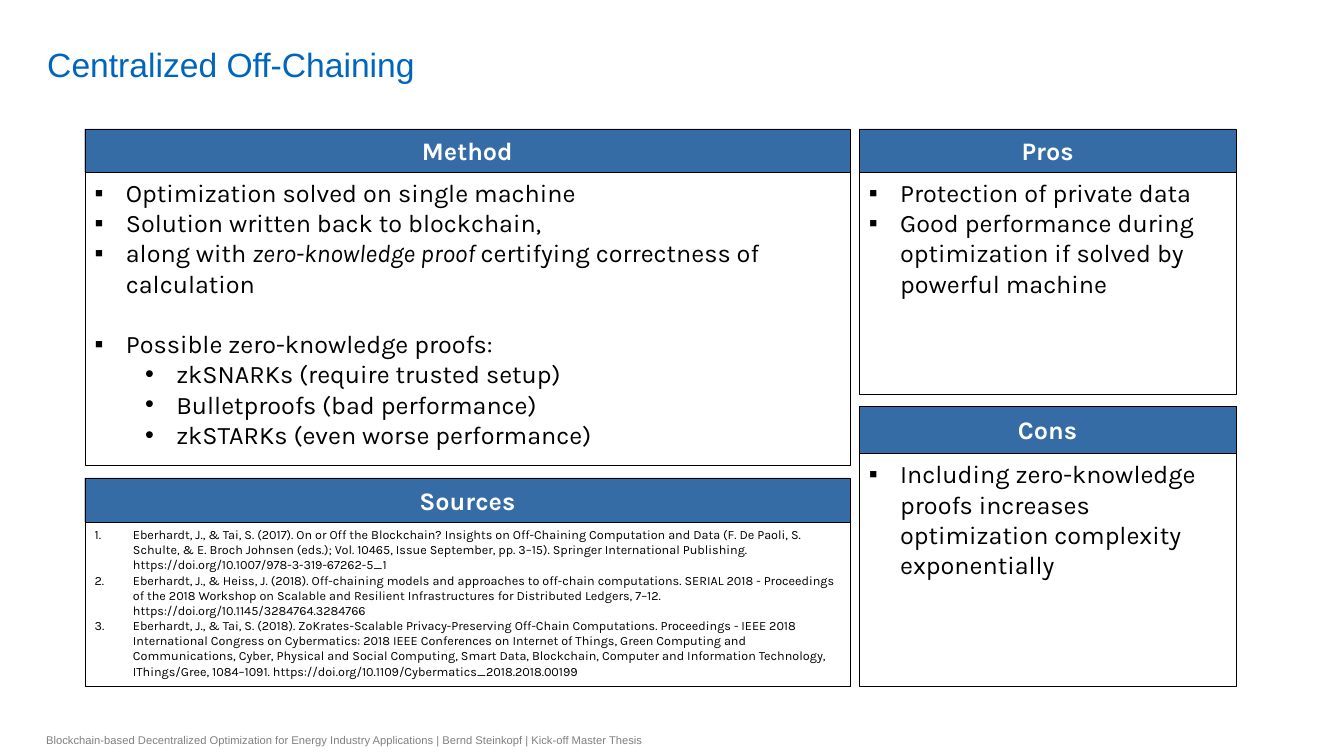
from lxml.etree import SubElement
from pptx import Presentation
from pptx.dml.color import RGBColor
from pptx.enum.shapes import MSO_SHAPE
from pptx.enum.text import MSO_ANCHOR, PP_ALIGN
from pptx.oxml.ns import qn
from pptx.util import Inches, Pt

COLORS = {"title": "0065BD", "header": "356CA5", "white": "FFFFFF",
          "black": "000000", "footer": "808080"}

TITLE = "Centralized Off-Chaining"
FOOTER = ("Blockchain-based Decentralized Optimization for Energy Industry Applications"
          " | Bernd Steinkopf | Kick-off Master Thesis")

# Each paragraph: (style, text); text between asterisks is italic
METHOD = [
    ("square", "Optimization solved on single machine"),
    ("square", "Solution written back to blockchain,"),
    ("square", "along with *zero-knowledge proof *certifying correctness of calculation"),
    ("square after gap", "Possible zero-knowledge proofs:"),
    ("dot", "zkSNARKs (require trusted setup)"),
    ("dot", "Bulletproofs (bad performance)"),
    ("dot", "zkSTARKs (even worse performance)"),
]
SOURCES = [
    ("number", "Eberhardt, J., & Tai, S. (2017). On or Off the Blockchain? Insights on "
     "Off-Chaining Computation and Data (F. De Paoli, S. Schulte, & E. Broch Johnsen (eds.); "
     "Vol. 10465, Issue September, pp. 3–15). Springer International Publishing. "
     "https://doi.org/10.1007/978-3-319-67262-5_1"),
    ("number", "Eberhardt, J., & Heiss, J. (2018). Off-chaining models and approaches to "
     "off-chain computations. SERIAL 2018 - Proceedings of the 2018 Workshop on Scalable and "
     "Resilient Infrastructures for Distributed Ledgers, 7–12. "
     "https://doi.org/10.1145/3284764.3284766"),
    ("number", "Eberhardt, J., & Tai, S. (2018). ZoKrates-Scalable Privacy-Preserving "
     "Off-Chain Computations. Proceedings - IEEE 2018 International Congress on Cybermatics: "
     "2018 IEEE Conferences on Internet of Things, Green Computing and Communications, Cyber, "
     "Physical and Social Computing, Smart Data, Blockchain, Computer and Information "
     "Technology, IThings/Gree, 1084–1091. https://doi.org/10.1109/Cybermatics_2018.2018.00199"),
]
PROS = [
    ("square", "Protection of private data"),
    ("square", "Good performance during optimization if solved by powerful machine"),
]
CONS = [("square", "Including zero-knowledge proofs increases optimization complexity "
                   "exponentially")]

# Bullet character (None for numbers), left margin, hanging indent, size, space before
STYLES = {
    "square": ("▪", 0.31, 0.31, 18, 0),
    "square after gap": ("▪", 0.31, 0.31, 18, 21.6),
    "dot": ("•", 0.81, 0.31, 18, 0),
    "number": (None, 0.38, 0.38, 9, 0),
}

LEFT_COLUMN, RIGHT_COLUMN = (0.84, 7.59), (8.52, 3.74)
# Heading, paragraphs, column, top, header height, bottom
PANELS = [
    ("Pros", PROS, RIGHT_COLUMN, 1.28, 0.43, 3.91),
    ("Cons", CONS, RIGHT_COLUMN, 4.03, 0.47, 6.81),
    ("Sources", SOURCES, LEFT_COLUMN, 4.74, 0.44, 6.81),
    ("Method", METHOD, LEFT_COLUMN, 1.28, 0.43, 4.62),
]


def rgb(name):
    return RGBColor.from_string(COLORS[name])


def set_font(paragraph, name, size, color, bold=False):
    font = paragraph.font
    font.name, font.size, font.bold = name, Pt(size), bold
    font.color.rgb = rgb(color)


def set_bullet(paragraph, character, margin, hanging):
    properties = paragraph._p.get_or_add_pPr()
    properties.set("marL", str(Inches(margin)))
    properties.set("indent", str(-Inches(hanging)))
    if character:
        SubElement(properties, qn("a:buFont"), typeface="Arial")
        SubElement(properties, qn("a:buChar"), char=character)
    else:
        SubElement(properties, qn("a:buAutoNum"), type="arabicPeriod")


def add_box(slide, left, top, width, height, fill, anchor):
    shape = slide.shapes.add_shape(MSO_SHAPE.RECTANGLE, Inches(left), Inches(top),
                                   Inches(width), Inches(height))
    shape.shadow.inherit = False
    shape.fill.solid()
    shape.fill.fore_color.rgb = rgb(fill)
    shape.line.color.rgb = rgb("black")
    shape.line.width = Pt(0.25)
    shape.text_frame.word_wrap = True
    shape.text_frame.vertical_anchor = anchor
    return shape.text_frame


def add_panel(slide, heading, items, column, top, header_height, bottom):
    """Add a header bar and, directly below it, a box with a list."""
    left, width = column
    header = add_box(slide, left, top, width, header_height, "header", MSO_ANCHOR.MIDDLE)
    paragraph = header.paragraphs[0]
    paragraph.text = heading
    paragraph.alignment = PP_ALIGN.CENTER
    set_font(paragraph, "Karla", 18, "white", bold=True)

    body_top = top + header_height
    body = add_box(slide, left, body_top, width, bottom - body_top, "white", MSO_ANCHOR.TOP)
    for index, (style, text) in enumerate(items):
        character, margin, hanging, size, space_before = STYLES[style]
        paragraph = body.add_paragraph() if index else body.paragraphs[0]
        paragraph.alignment = PP_ALIGN.LEFT
        paragraph.level = 1 if style == "dot" else 0
        set_bullet(paragraph, character, margin, hanging)
        if space_before:
            paragraph.space_before = Pt(space_before)
        set_font(paragraph, "Karla", size, "black")
        for part, words in enumerate(text.split("*")):
            run = paragraph.add_run()
            run.text = words
            if part % 2:
                run.font.italic = True


def add_label(slide, text, box, size, color, anchor):
    frame = slide.shapes.add_textbox(*map(Inches, box)).text_frame
    frame.word_wrap = True
    frame.vertical_anchor = anchor
    frame.margin_top = frame.margin_bottom = 0
    frame.text = text
    set_font(frame.paragraphs[0], "Arial", size, color)


def main():
    presentation = Presentation()
    presentation.slide_width, presentation.slide_height = Inches(13.33), Inches(7.5)
    slide = presentation.slides.add_slide(presentation.slide_layouts[6])
    add_label(slide, TITLE, (0.37, 0.05, 11.58, 0.79), 24, "title", MSO_ANCHOR.BOTTOM)
    for panel in PANELS:
        add_panel(slide, *panel)
    add_label(slide, FOOTER, (0.36, 7.18, 6.3, 0.32), 8, "footer", MSO_ANCHOR.MIDDLE)
    presentation.save("out.pptx")


if __name__ == "__main__":
    main()
